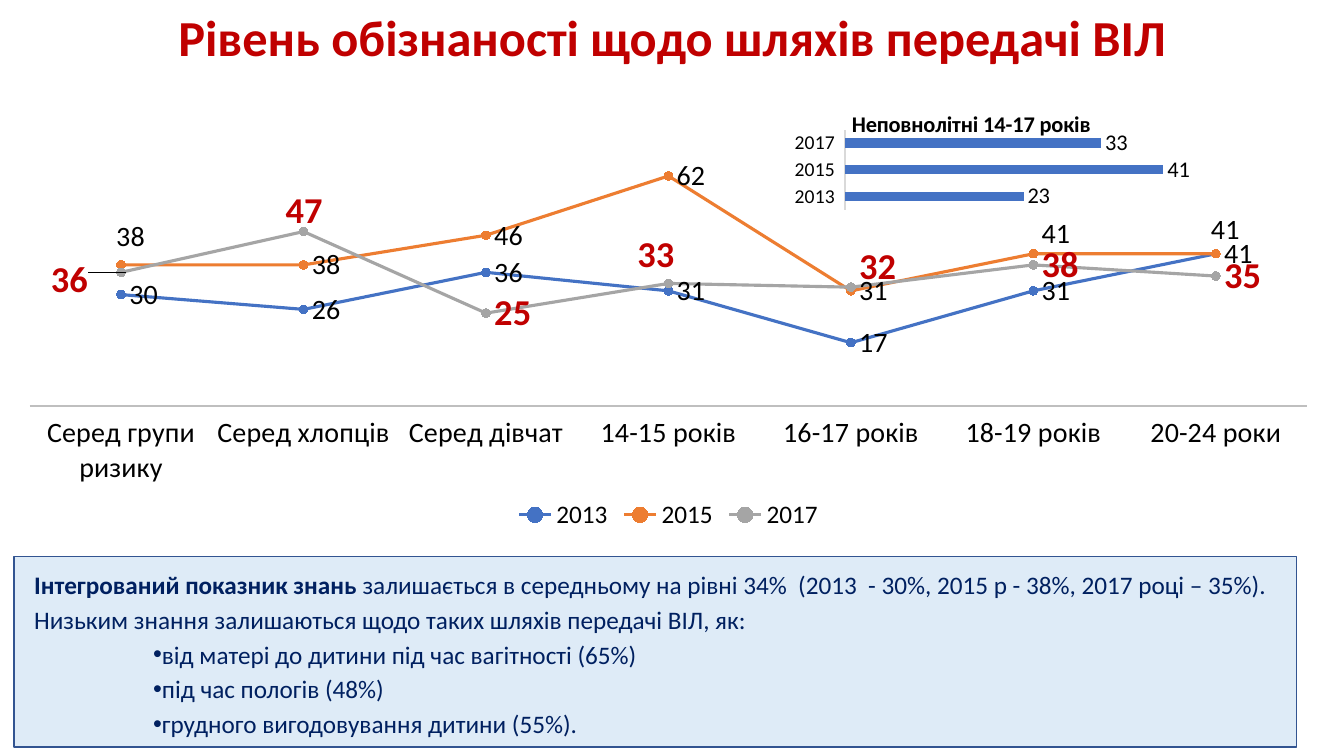
from lxml.etree import SubElement
from pptx import Presentation
from pptx.chart.data import CategoryChartData
from pptx.dml.color import RGBColor
from pptx.enum.chart import XL_CHART_TYPE as CT, XL_LABEL_POSITION as LP
from pptx.enum.chart import XL_LEGEND_POSITION, XL_MARKER_STYLE, XL_TICK_LABEL_POSITION, XL_TICK_MARK
from pptx.enum.shapes import MSO_SHAPE
from pptx.enum.text import MSO_ANCHOR, MSO_AUTO_SIZE, PP_ALIGN
from pptx.oxml import parse_xml
from pptx.oxml.ns import nsdecls, qn
from pptx.util import Inches, Pt

FONT = "Calibri"
RED, NAVY, BLUE, BLACK = "C00000", "002060", "4472C4", "000000"
TITLE = "Рівень обізнаності щодо шляхів передачі ВІЛ"

GROUPS = ["Серед групи ризику", "Серед хлопців", "Серед дівчат", "14-15 років",
          "16-17 років", "18-19 років", "20-24 роки"]
# moves: point index -> label shift from its usual place, as shares of the chart
YEARS = [
    dict(name="2013", values=[30, 26, 36, 31, 17, 31, 41], color=BLUE,
         label=dict(size=20, color=BLACK), moves={}),
    dict(name="2015", values=[38, 38, 46, 62, 31, 41, 41], color="ED7D31",
         label=dict(size=20, color=BLACK),
         moves={0: (-0.01, -0.07), 5: (0, -0.05), 6: (-0.01, -0.06)}),
    dict(name="2017", values=[36, 47, 25, 33, 32, 38, 35], color="A5A5A5",
         label=dict(size=26, color=RED, bold=True),
         moves={0: (-0.06, 0.02), 1: (-0.02, -0.05), 3: (-0.03, -0.07), 4: (0, -0.05)}),
]
MINORS_TITLE = "Неповнолітні 14-17 років"
MINORS = {"2013": 23, "2015": 41, "2017": 33}

# (left margin, first-line indent, bullet, runs of (text, bold))
PLAIN, LISTED = (0.04, 0.06, None), (1.09, 0.19, "•")
NOTES = [
    (*PLAIN, [("Інтегрований показник знань", True),
              (" залишається в середньому на рівні 34%  "
               "(2013  - 30%, 2015 р - 38%, 2017 році – 35%). ", False)]),
    (*PLAIN, [("Низьким знання залишаються щодо таких шляхів передачі ВІЛ, як:", False)]),
    (*LISTED, [("від матері до дитини під час вагітності (65%)", False)]),
    (*LISTED, [("під час пологів (48%)", False)]),
    (*LISTED, [("грудного вигодовування дитини (55%).", False)]),
]


def rgb(color):
    return RGBColor.from_string(color)


def box(*lengths):
    return [Inches(v) for v in lengths]


def style(font, size, color=BLACK, bold=False):
    for key, value in dict(name=FONT, size=Pt(size), bold=bold).items():
        setattr(font, key, value)
    font.color.rgb = rgb(color)


def layout(**shares):
    """Manual chart layout; the keys are the XML names of its parts."""
    parts = "".join(f'<c:{k} val="{v}"/>' for k, v in shares.items())
    return parse_xml(f'<c:layout {nsdecls("c")}><c:manualLayout>{parts}'
                     "</c:manualLayout></c:layout>")


def add_chart(kind, place, cats, series, top, plot, axis):
    """Chart with a hidden value axis from 0 to top and a fixed inner plot area."""
    data = CategoryChartData(number_format="0")
    data.categories = cats
    for name, values in series:
        data.add_series(name, values)
    chart = s.shapes.add_chart(kind, *box(*place), data).chart
    style(chart.font, axis["size"])
    chart.has_title = chart.has_legend = False

    va, ca = chart.value_axis, chart.category_axis
    for key, value in dict(minimum_scale=0, maximum_scale=top, visible=False,
                           has_major_gridlines=False).items():
        setattr(va, key, value)
    ca.has_major_gridlines = False
    ca.major_tick_mark = ca.minor_tick_mark = XL_TICK_MARK.NONE
    ca.tick_label_position = XL_TICK_LABEL_POSITION.LOW
    style(ca.tick_labels.font, axis["size"])
    ca.format.line.color.rgb = rgb(axis["color"])
    ca.format.line.width = Pt(axis["width"])

    area = chart.plots[0]._element.getparent()
    for old in area.findall(qn("c:layout")):
        area.remove(old)
    area.insert(0, layout(layoutTarget="inner", xMode="edge", yMode="edge",
                          **dict(zip("xywh", plot))))
    chart.plots[0].vary_by_categories = False
    return chart


def show_labels(series, position, **font):
    labels = series.data_labels
    labels.show_value = True
    labels.number_format, labels.number_format_is_linked = "0", False
    labels.position = position
    style(labels.font, **font)


def add_years_chart():
    chart = add_chart(CT.LINE_MARKERS, (0.14, 1.3, 12.98, 4.01), GROUPS,
                      [(y["name"], y["values"]) for y in YEARS], 70,
                      (0.012, 0.038, 0.976, 0.642),
                      dict(size=20, color="BFBFBF", width=1.5))
    chart.has_legend = True
    chart.legend.position = XL_LEGEND_POSITION.BOTTOM
    chart.legend.include_in_layout = False
    style(chart.legend.font, 18)
    for series, year in zip(chart.plots[0].series, YEARS):
        color = rgb(year["color"])
        series.smooth = False
        series.format.line.color.rgb = color
        series.format.line.width = Pt(2.25)
        mk = series.marker
        mk.style, mk.size = XL_MARKER_STYLE.CIRCLE, 6
        mk.format.fill.solid()
        mk.format.fill.fore_color.rgb = color
        mk.format.line.color.rgb = color
        show_labels(series, LP.RIGHT, **year["label"])
        for i, (dx, dy) in year["moves"].items():
            label = series.points[i].data_label
            style(label.font, **year["label"])
            label.position = LP.RIGHT
            idx = series._element.xpath(f"c:dLbls/c:dLbl/c:idx[@val='{i}']")[0]
            idx.addnext(layout(x=dx, y=dy))


def add_minors_chart():
    chart = add_chart(CT.BAR_CLUSTERED, (7.57, 0.9, 4.66, 1.39), list(MINORS),
                      [("Series 1", list(MINORS.values()))], 45,
                      (0.174, 0.279, 0.744, 0.572),
                      dict(size=14, color="D9D9D9", width=0.75))
    chart.has_title = True
    title = chart.chart_title
    r = title.text_frame.paragraphs[0].add_run()
    r.text = MINORS_TITLE
    style(r.font, 16, bold=True)
    for old in title._element.findall(qn("c:layout")):
        title._element.remove(old)
    title._element.find(qn("c:tx")).addnext(
        layout(xMode="edge", yMode="edge", x=0.18, y=0.1))
    chart.plots[0].gap_width = 182
    bars = chart.plots[0].series[0]
    bars.format.fill.solid()
    bars.format.fill.fore_color.rgb = rgb(BLUE)
    show_labels(bars, LP.OUTSIDE_END, size=16)


def add_notes():
    sp = s.shapes.add_shape(MSO_SHAPE.RECTANGLE, *box(0.14, 5.52, 12.72, 1.89))
    sp.shadow.inherit = False
    sp.fill.solid()
    sp.fill.fore_color.rgb = rgb("DEEBF7")
    sp.line.color.rgb = rgb("325491")
    sp.line.width = Pt(1)
    tf = sp.text_frame
    tf.word_wrap, tf.vertical_anchor = True, MSO_ANCHOR.MIDDLE
    for i, (margin, indent, bullet, runs) in enumerate(NOTES):
        p = tf.add_paragraph() if i else tf.paragraphs[0]
        p.alignment, p.line_spacing = PP_ALIGN.JUSTIFY, 1.15
        pPr = p._p.get_or_add_pPr()
        pPr.set("marL", str(Inches(margin)))
        pPr.set("indent", str(Inches(indent)))
        if bullet:
            SubElement(pPr, qn("a:buFont")).set("typeface", "Arial")
            SubElement(pPr, qn("a:buChar")).set("char", bullet)
        for text, bold in runs:
            r = p.add_run()
            r.text = text
            style(r.font, 18, NAVY, bold)


prs = Presentation()
prs.slide_width, prs.slide_height = box(13.33, 7.5)
s = prs.slides.add_slide(prs.slide_layouts[5])

title = s.shapes.title
title.left, title.top, title.width, title.height = box(0.92, 0.22, 11.5, 0.36)
tf = title.text_frame
tf.text = TITLE
tf.auto_size, tf.vertical_anchor = MSO_AUTO_SIZE.NONE, MSO_ANCHOR.MIDDLE
p = tf.paragraphs[0]
p.alignment, p.line_spacing = PP_ALIGN.CENTER, 0.9
style(p.runs[0].font, 36, RED, True)

add_years_chart()
add_minors_chart()
add_notes()
prs.save("out.pptx")
